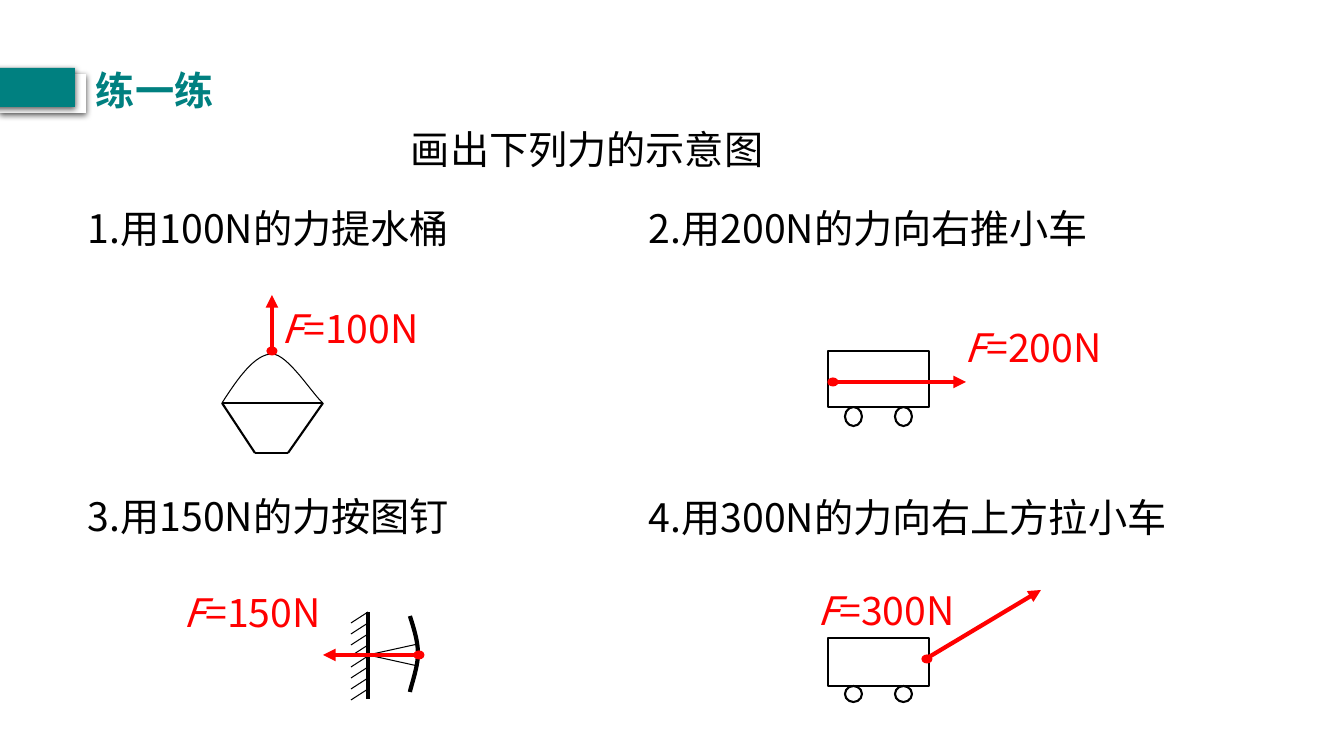
"""Build a physics practice slide with four force diagrams."""
from lxml import etree
from pptx import Presentation
from pptx import util as u
from pptx.dml.color import RGBColor
from pptx.enum import shapes, text
from pptx.oxml import ns

PX = 914400 / 100.8
BLACK = RGBColor(0, 0, 0)
RED = RGBColor(255, 0, 0)
TEAL = RGBColor(0, 128, 128)
WHITE = RGBColor(255, 255, 255)
FONT = "Noto Sans CJK SC"

deck = Presentation()
deck.slide_width, deck.slide_height = round(1344 * PX), round(756 * PX)
page = deck.slides.add_slide(deck.slide_layouts[6])


def add_outline(kind, bounds, fill=None, line=None, width=1.5):
    shape = page.shapes.add_shape(kind, *[round(n * PX) for n in bounds])
    shape.shadow.inherit = False
    if fill is None:
        shape.fill.background()
    else:
        shape.fill.solid()
        shape.fill.fore_color.rgb = fill
    if line is None:
        shape.line.fill.background()
    else:
        shape.line.color.rgb = line
        shape.line.width = u.Pt(width)
    return shape


def add_stroke(ends, width, color=BLACK):
    stroke = page.shapes.add_connector(
        shapes.MSO_CONNECTOR.STRAIGHT, *[round(n * PX) for n in ends])
    stroke.line.color.rgb = color
    stroke.line.width = u.Pt(width)
    etree.SubElement(stroke._element.spPr, ns.qn("a:effectLst"))
    return stroke


bucket_strokes = [(222, 403, 323, 403), (222, 403, 255, 453),
                  (323, 403, 288, 453), (255, 453, 288, 453)]
for ends in bucket_strokes:
    add_stroke(ends, 1.5)

for cart_top, body_height, wheel_height in [(351, 56, 19), (638, 48, 16)]:
    add_outline(shapes.MSO_SHAPE.RECTANGLE, (828, cart_top, 101, body_height), line=BLACK)
    for wheel_left in (845, 895):
        wheel = (wheel_left, cart_top + body_height, 17, wheel_height)
        add_outline(shapes.MSO_SHAPE.OVAL, wheel, line=BLACK)

add_stroke((368, 612, 368, 699), 3)
for hatch in range(8):
    hatch_top = 612 + 11 * hatch
    add_stroke((368, hatch_top, 351, hatch_top + 11), 0.75)
for pin_end in (644, 666):
    add_stroke((368, 655, 418, pin_end), 0.75)

bucket_handle = [(222, 403), (238, 378), (255, 354), (272, 354),
                 (288, 354), (313, 395), (323, 403)]
pin_head = [(410, 616), (414, 629), (418, 641), (418, 654),
            (418, 667), (411, 686), (410, 692)]
for knots, width in [(bucket_handle, 0.75), (pin_head, 3)]:
    points = []
    for first in (0, 3):
        for step in range(1, 17):
            t = step / 16
            weights = ((1 - t) ** 3, 3 * t * (1 - t) ** 2, 3 * t * t * (1 - t), t ** 3)
            curve = list(zip(weights, knots[first:first + 4]))
            points.append((round(sum(w * x for w, (x, y) in curve) * PX),
                           round(sum(w * y for w, (x, y) in curve) * PX)))
    start_x, start_y = knots[0]
    builder = page.shapes.build_freeform(round(start_x * PX), round(start_y * PX))
    builder.add_line_segments(points, close=False)
    arc = builder.convert_to_shape()
    arc.shadow.inherit = False
    arc.fill.background()
    arc.line.color.rgb = BLACK
    arc.line.width = u.Pt(width)

forces = [((267, 347), (272, 351, 272, 295)),
          ((828, 378), (838, 382, 966, 382)),
          ((414, 651), (414, 655, 323, 655)),
          ((922, 655), (924, 660, 1041, 590))]
for (dot_left, dot_top), ends in forces:
    add_outline(shapes.MSO_SHAPE.OVAL, (dot_left, dot_top, 10, 8), RED, RED, 0.75)
    arrow = add_stroke(ends, 3, RED)
    etree.SubElement(arrow.line._get_or_add_ln(), ns.qn("a:tailEnd"), type="triangle")

for bounds, fill in [((0, 74, 86, 39), WHITE), ((-11, 68, 86, 39), TEAL)]:
    banner = add_outline(shapes.MSO_SHAPE.RECTANGLE, bounds, fill)
    effects = banner._element.spPr.find(ns.qn("a:effectLst"))
    shadow = etree.SubElement(effects, ns.qn("a:outerShdw"), blurRad="57150",
                              dist="19050", dir="5400000", algn="ctr", rotWithShape="0")
    shade = etree.SubElement(shadow, ns.qn("a:srgbClr"), val="000000")
    etree.SubElement(shade, ns.qn("a:alpha"), val="63000")

texts = [
    (86, 61, 377, TEAL, ["练一练"]),
    (401, 120, 662, BLACK, ["画出下列力的示意图"]),
    (78, 199, 404, BLACK, ["1.用100N的力提水桶"]),
    (639, 199, 483, BLACK, ["2.用200N的力向右推小车"]),
    (78, 487, 404, BLACK, ["3.用150N的力按图钉"]),
    (639, 488, 562, BLACK, ["4.用300N的力向右上方拉小车"]),
    (272, 299, 172, RED, ["F", "=100N"]),
    (955, 318, 172, RED, ["F", "=200N"]),
    (174, 583, 172, RED, ["F", "=150N"]),
    (808, 581, 172, RED, ["F", "=300N"]),
]
for left, top, width, color, spans in texts:
    box = page.shapes.add_textbox(*[round(n * PX) for n in (left, top, width, 57)])
    box.text_frame.word_wrap = True
    box.text_frame.auto_size = text.MSO_AUTO_SIZE.SHAPE_TO_FIT_TEXT
    para = box.text_frame.paragraphs[0]
    for wording in spans:
        span = para.add_run()
        span.text = wording
        span.font.name = FONT
        span.font.size = u.Pt(28)
        span.font.color.rgb = color
        span.font.bold = color == TEAL
        span.font.italic = wording == "F"
        etree.SubElement(span.font._element, ns.qn("a:ea"), typeface=FONT)

deck.save("out.pptx")
